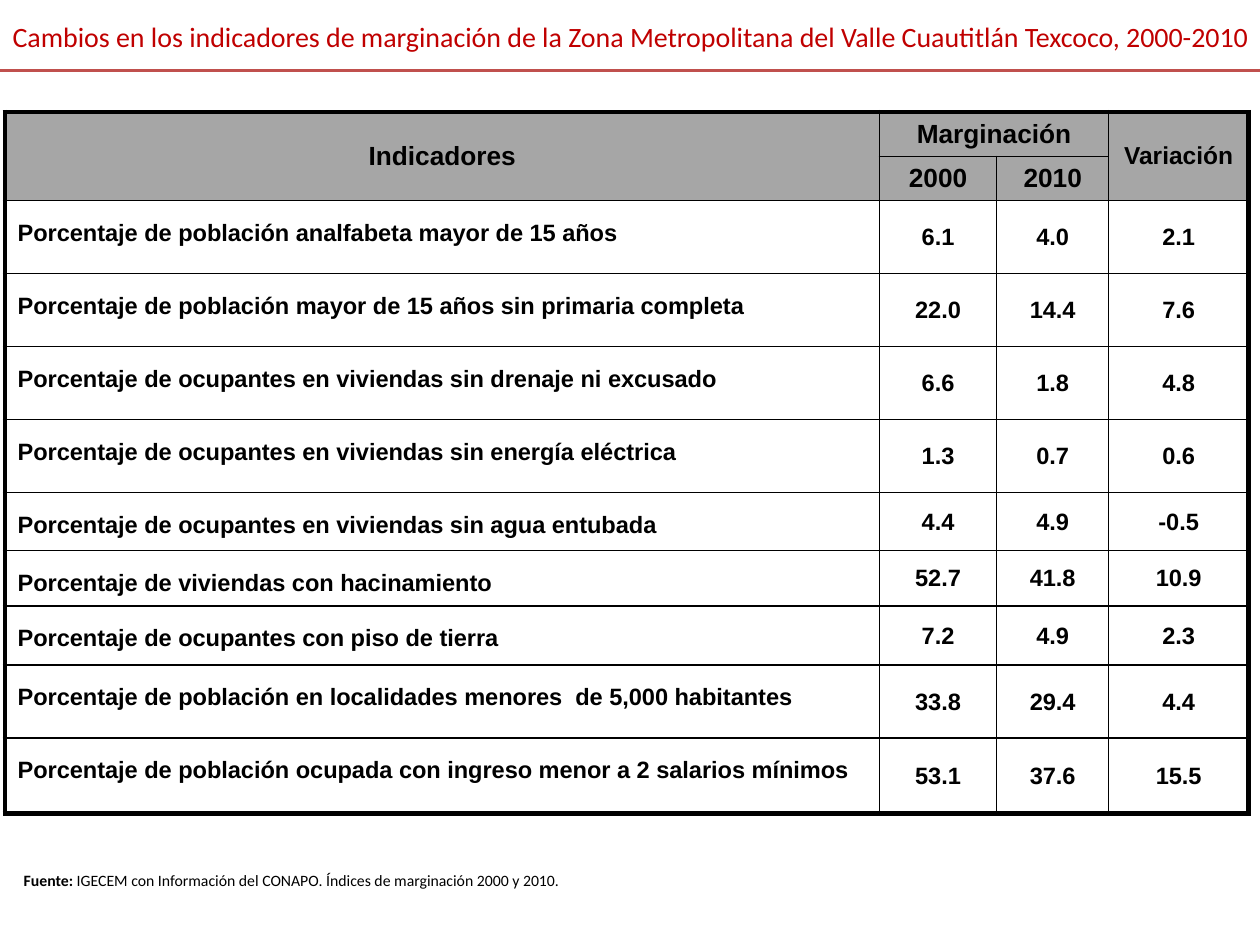
from lxml import etree
from pptx import Presentation
from pptx.dml.color import RGBColor
from pptx.enum.shapes import MSO_CONNECTOR
from pptx.enum.text import MSO_ANCHOR, MSO_AUTO_SIZE, PP_ALIGN
from pptx.oxml.ns import qn
from pptx.util import Inches, Pt

LEFT, CENTER = PP_ALIGN.LEFT, PP_ALIGN.CENTER
TOP, MIDDLE = MSO_ANCHOR.TOP, MSO_ANCHOR.MIDDLE
GROW = MSO_AUTO_SIZE.SHAPE_TO_FIT_TEXT
STRAIGHT = MSO_CONNECTOR.STRAIGHT

COLORS = {"title": "C00000", "rule": "C0504D", "header": "A6A6A6", "black": "000000"}

HEADER = [["Indicadores", "Marginación", "", "Variación"], ["", "2000", "2010", ""]]
INDICATORS = [
    ["Porcentaje de población analfabeta mayor de 15 años", "6.1", "4.0", "2.1"],
    ["Porcentaje de población mayor de 15 años sin primaria completa", "22.0", "14.4", "7.6"],
    ["Porcentaje de ocupantes en viviendas sin drenaje ni excusado", "6.6", "1.8", "4.8"],
    ["Porcentaje de ocupantes en viviendas sin energía eléctrica", "1.3", "0.7", "0.6"],
    ["Porcentaje de ocupantes en viviendas sin agua entubada", "4.4", "4.9", "-0.5"],
    ["Porcentaje de viviendas con hacinamiento", "52.7", "41.8", "10.9"],
    ["Porcentaje de ocupantes con piso de tierra", "7.2", "4.9", "2.3"],
    ["Porcentaje de población en localidades menores  de 5,000 habitantes", "33.8", "29.4", "4.4"],
    ["Porcentaje de población ocupada con ingreso menor a 2 salarios mínimos", "53.1", "37.6", "15.5"],
]
ROWS = HEADER + INDICATORS
COLUMN_WIDTHS = [6.94, 0.93, 0.89, 1.11]
ROW_HEIGHTS = [0.34] * 2 + [0.58] * 4 + [0.46, 0.34, 0.47, 0.58, 0.6]


def set_font(font, name, size, color, bold=False):
    font.name, font.size, font.bold = name, Pt(size), bold
    font.color.rgb = RGBColor.from_string(COLORS[color])


def add_borders(cell, widths):
    """Draw black borders; widths are points for left, right, top, bottom."""
    properties = cell._tc.get_or_add_tcPr()
    for side, width in zip("LRTB", widths):
        line = etree.SubElement(properties, qn(f"a:ln{side}"), w=str(Pt(width)))
        fill = etree.SubElement(line, qn("a:solidFill"))
        etree.SubElement(fill, qn("a:srgbClr"), val=COLORS["black"])


deck = Presentation()
deck.slide_width, deck.slide_height = Inches(10), Inches(7.5)
page = deck.slides.add_slide(deck.slide_layouts[5])

# Title
title = page.shapes.title
title.left, title.top = Inches(0), Inches(0.09)
title.width, title.height = Inches(10.17), Inches(0.38)
frame = title.text_frame
frame.text = (
    "Cambios en los indicadores de marginación de la Zona Metropolitana "
    "del Valle Cuautitlán Texcoco, 2000-2010"
)
frame.word_wrap, frame.auto_size, frame.vertical_anchor = True, GROW, TOP
para = frame.paragraphs[0]
para.alignment, para.line_spacing = LEFT, 1.05
set_font(para.font, "Calibri", 16, "title")

rule = page.shapes.add_connector(STRAIGHT, Inches(0), Inches(0.56), Inches(10), Inches(0.56))
rule.line.color.rgb = RGBColor.from_string(COLORS["rule"])
rule.line.width = Pt(1.5)
etree.SubElement(rule._element.spPr, qn("a:effectLst"))

# Table of indicators
table = page.shapes.add_table(
    len(ROWS), len(COLUMN_WIDTHS), Inches(0.04), Inches(0.89),
    Inches(sum(COLUMN_WIDTHS)), Inches(sum(ROW_HEIGHTS)),
).table
table.first_row = table.horz_banding = False
for column, width in zip(table.columns, COLUMN_WIDTHS):
    column.width = Inches(width)
for row, height in zip(table.rows, ROW_HEIGHTS):
    row.height = Inches(height)

last_row, last_column = len(ROWS) - 1, len(COLUMN_WIDTHS) - 1
for r, texts in enumerate(ROWS):
    for c, text in enumerate(texts):
        cell = table.cell(r, c)
        outer_edges = (c == 0, c == last_column, r == 0, r == last_row)
        add_borders(cell, [3 if outer else 1 for outer in outer_edges])
        cell.text = text
        para = cell.text_frame.paragraphs[0]
        para.alignment, cell.vertical_anchor = CENTER, MIDDLE
        if r < len(HEADER):
            cell.fill.solid()
            cell.fill.fore_color.rgb = RGBColor.from_string(COLORS["header"])
            size = 14 if c == last_column else 15
        else:
            cell.fill.background()
            size = 13.5
            if c == 0:
                para.alignment, cell.vertical_anchor = LEFT, TOP
                para.line_spacing = 1.5
                para.space_before = para.space_after = Pt(4)
            else:
                cell.margin_left = cell.margin_right = cell.margin_top = Inches(0.01)
                cell.margin_bottom = Inches(0)
        set_font(para.font, "Arial", size, "black", bold=True)

table.cell(0, 0).merge(table.cell(1, 0))
table.cell(0, 1).merge(table.cell(0, 2))
table.cell(0, last_column).merge(table.cell(1, last_column))

# Source note
note = page.shapes.add_textbox(Inches(0.09), Inches(6.86), Inches(4.73), Inches(0.25))
frame = note.text_frame
frame.word_wrap, frame.auto_size = True, GROW
para = frame.paragraphs[0]
for text, bold in [
    ("Fuente: ", True),
    ("IGECEM con Información del CONAPO. Índices de marginación 2000 y 2010.", False),
]:
    span = para.add_run()
    span.text = text
    set_font(span.font, "Calibri", 9, "black", bold)

deck.save("out.pptx")
